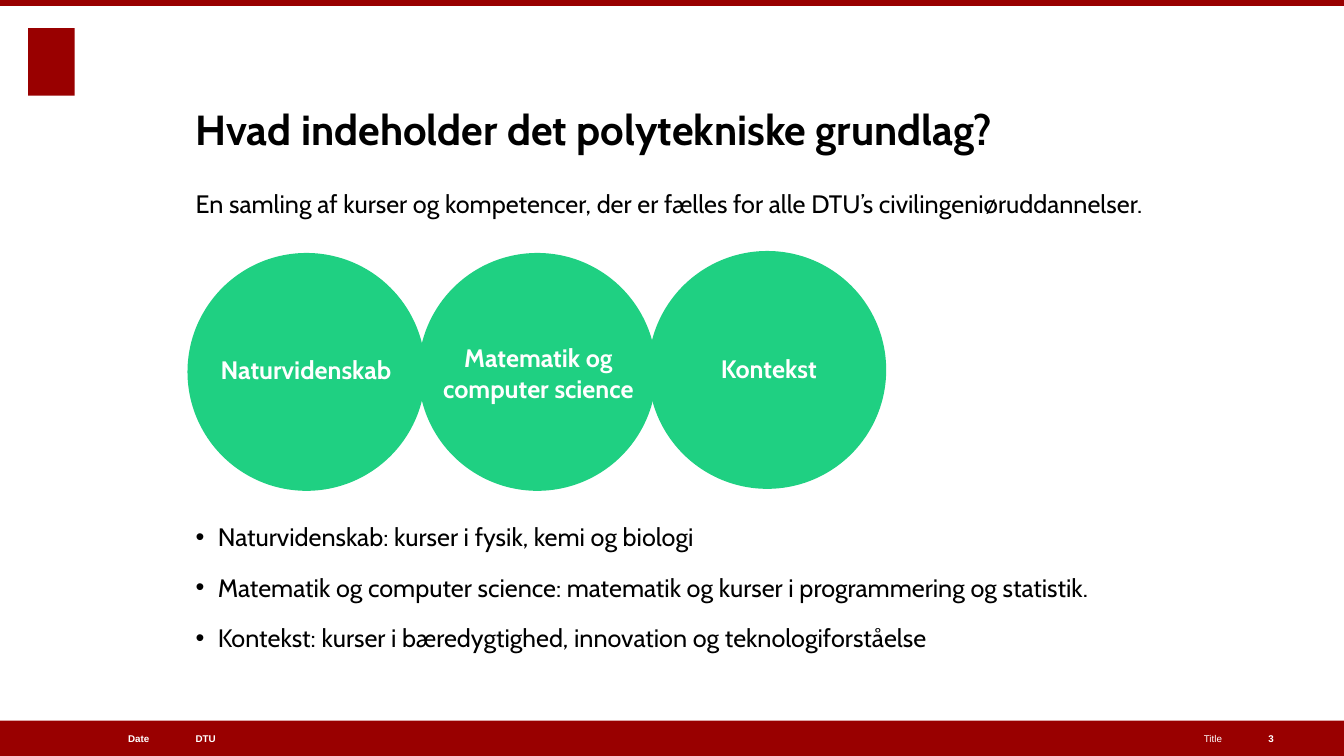
"""Build the slide on the contents of the polytechnic foundation."""
from typing import NamedTuple

from lxml import etree
from pptx import Presentation
from pptx import util as u
from pptx.dml.color import RGBColor
from pptx.enum import shapes, text
from pptx.oxml import ns

RED = RGBColor(0x99, 0x00, 0x00)
GREEN = RGBColor(0x1F, 0xD0, 0x82)
WHITE = RGBColor(0xFF, 0xFF, 0xFF)
BLACK = RGBColor(0x00, 0x00, 0x00)
LEFT, CENTER, RIGHT = text.PP_ALIGN.LEFT, text.PP_ALIGN.CENTER, text.PP_ALIGN.RIGHT
TOP, MIDDLE, BOTTOM = text.MSO_ANCHOR.TOP, text.MSO_ANCHOR.MIDDLE, text.MSO_ANCHOR.BOTTOM
RECTANGLE, OVAL = shapes.MSO_SHAPE.RECTANGLE, shapes.MSO_SHAPE.OVAL

TITLE_FONT = {"name": "Cabin", "size": u.Pt(30), "bold": True}
BODY_FONT = {"name": "Cabin", "size": u.Pt(18), "bold": False}
LABEL_FONT = {"name": "Cabin", "size": u.Pt(18), "bold": True}
FOOTER_FONT = {"name": "Arial", "size": u.Pt(7), "bold": True}

FOOTER_TOP, FOOTER_HEIGHT = 7.15, 0.35
CIRCLE_SIZE = 2.36
INTRO = "En samling af kurser og kompetencer, der er fælles for alle DTU’s civilingeniøruddannelser."
BULLETS = (
    "Naturvidenskab: kurser i fysik, kemi og biologi",
    "Matematik og computer science: matematik og kurser i programmering og statistik.",
    "Kontekst: kurser i bæredygtighed, innovation og teknologiforståelse",
)


class Box(NamedTuple):
    left: float
    top: float
    width: float
    height: float


class Figure(NamedTuple):
    preset: shapes.MSO_SHAPE
    box: Box
    color: RGBColor


class Label(NamedTuple):
    words: str
    box: Box
    alignment: text.PP_ALIGN
    anchor: text.MSO_ANCHOR
    font: dict


def footer(words: str, left: float, width: float, alignment=LEFT, bold: bool = True) -> Label:
    """Describe one text in the footer bar."""
    box = Box(left, FOOTER_TOP, width, FOOTER_HEIGHT)
    return Label(words, box, alignment, MIDDLE, {**FOOTER_FONT, "bold": bold})


FIGURES = (
    Figure(RECTANGLE, Box(0.28, 0.28, 0.46, 0.67), RED),
    Figure(RECTANGLE, Box(0, FOOTER_TOP, 13.33, FOOTER_HEIGHT), RED),
    Figure(RECTANGLE, Box(0, 0, 13.33, 0.06), RED),
    *(Figure(OVAL, Box(left, top, CIRCLE_SIZE, CIRCLE_SIZE), GREEN)
      for left, top in ((1.86, 2.51), (4.15, 2.51), (6.43, 2.49))),
)
LABELS = (
    footer("DTU", 1.94, 3.72),
    footer("Date", 0.27, 1.21, RIGHT),
    footer("Title", 6.11, 6.01, RIGHT, False),
    footer("3", 12.58, 0.47),
    Label("Naturvidenskab", Box(2.05, 3.52, 1.97, 0.3), CENTER, TOP, LABEL_FONT),
    Label("Matematik og computer science", Box(4.22, 3.4, 2.24, 0.61), CENTER, TOP, LABEL_FONT),
    Label("Kontekst", Box(6.64, 3.51, 1.97, 0.3), CENTER, TOP, LABEL_FONT),
)


def lengths(box: Box) -> list[u.Length]:
    """Convert a box to slide lengths."""
    return [u.Inches(value) for value in box]


def format_frame(frame, anchor) -> None:
    """Remove the margins of a text frame and let it wrap."""
    values = {"margin_left": 0, "margin_top": 0, "margin_right": 0, "margin_bottom": 0,
              "word_wrap": True, "auto_size": text.MSO_AUTO_SIZE.NONE, "vertical_anchor": anchor}
    for name, value in values.items():
        setattr(frame, name, value)


def write(paragraph, words: str, font: dict, color: RGBColor, alignment=LEFT) -> None:
    """Fill a paragraph with formatted words."""
    paragraph.text = words
    paragraph.alignment = alignment
    for name, value in font.items():
        setattr(paragraph.font, name, value)
    paragraph.font.color.rgb = color


def add_figure(slide, figure: Figure) -> None:
    """Draw a plain filled shape."""
    shape = slide.shapes.add_shape(figure.preset, *lengths(figure.box))
    shape.shadow.inherit = False
    shape.fill.solid()
    shape.fill.fore_color.rgb = figure.color
    shape.line.fill.background()


def add_label(slide, label: Label) -> None:
    """Draw a white label."""
    frame = slide.shapes.add_textbox(*lengths(label.box)).text_frame
    format_frame(frame, label.anchor)
    write(frame.paragraphs[0], label.words, label.font, WHITE, label.alignment)


def add_title(slide) -> None:
    """Place and format the title."""
    title = slide.shapes.title
    title.left, title.top, title.width, title.height = lengths(Box(1.94, 0.47, 10.18, 1.06))
    format_frame(title.text_frame, BOTTOM)
    write(title.text_frame.paragraphs[0], "Hvad indeholder det polytekniske grundlag?", TITLE_FONT, BLACK)


def add_body(slide) -> None:
    """Write the introduction and, below the circles, the bullets."""
    frame = slide.shapes.add_textbox(*lengths(Box(1.94, 1.87, 10.18, 4.97))).text_frame
    format_frame(frame, TOP)
    write(frame.paragraphs[0], INTRO, BODY_FONT, BLACK)
    for index, words in enumerate(BULLETS):
        paragraph = frame.add_paragraph()
        paragraph.line_spacing = 1.5
        paragraph.space_before = u.Pt(3.6 if index else 205.5)
        properties = paragraph._p.get_or_add_pPr()
        properties.set("marL", str(u.Inches(0.22)))
        properties.set("indent", str(u.Inches(-0.22)))
        etree.SubElement(properties, ns.qn("a:buFont"), typeface="Arial")
        etree.SubElement(properties, ns.qn("a:buChar"), char="•")
        write(paragraph, words, BODY_FONT, BLACK)


def main() -> None:
    """Create and save the presentation."""
    presentation = Presentation()
    presentation.slide_width, presentation.slide_height = u.Inches(13.33), u.Inches(7.5)
    slide = presentation.slides.add_slide(presentation.slide_layouts[5])
    add_title(slide)
    add_body(slide)
    for figure in FIGURES:
        add_figure(slide, figure)
    for label in LABELS:
        add_label(slide, label)
    presentation.save("out.pptx")


if __name__ == "__main__":
    main()
